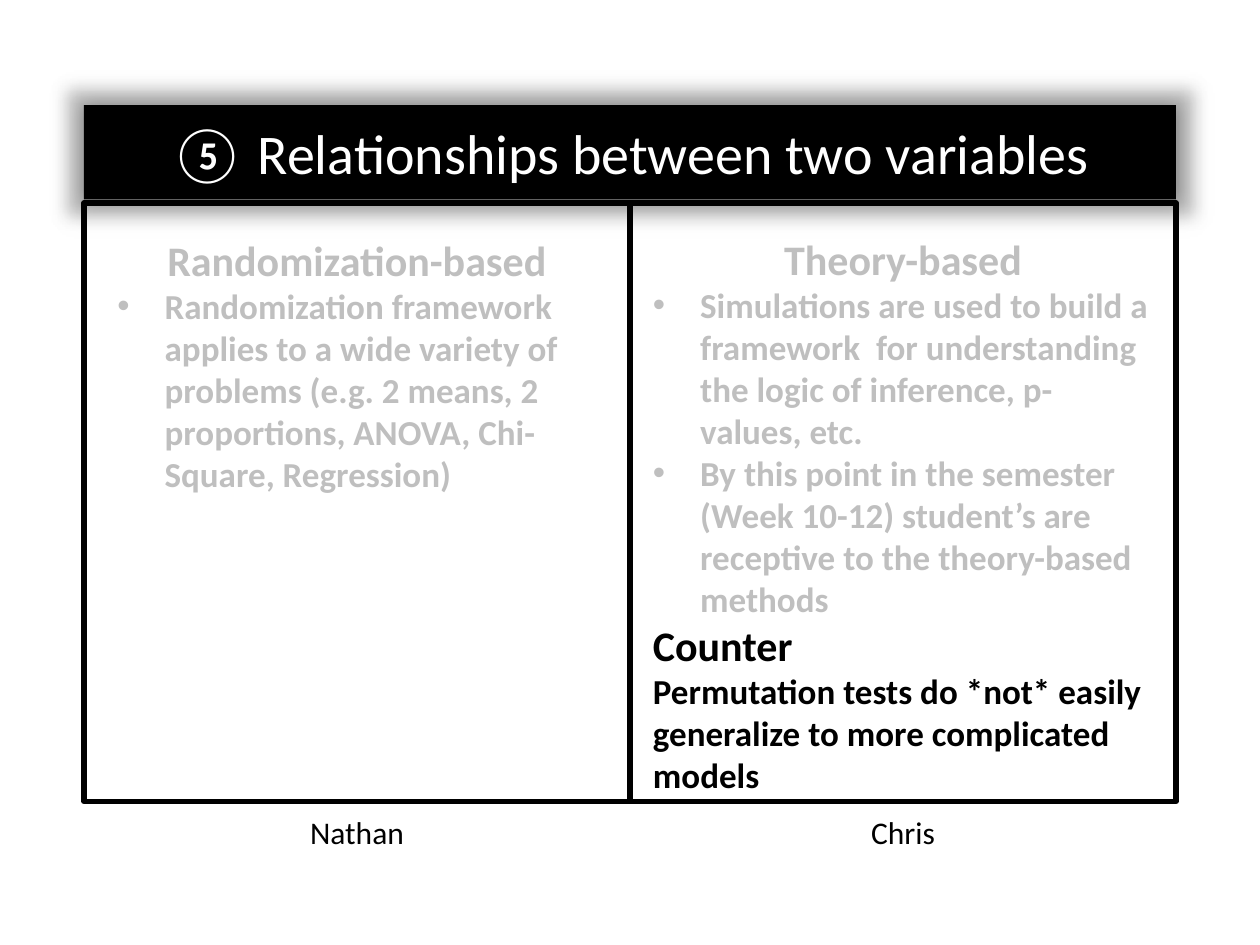
"""Build a slide that sets randomization-based against theory-based methods."""
import lxml.etree
import pptx
import pptx.dml.color
import pptx.enum.shapes
import pptx.enum.text
import pptx.oxml
import pptx.util

Pt = pptx.util.Pt
ALIGN = pptx.enum.text.PP_ALIGN
NAMESPACE = "http://schemas.openxmlformats.org/drawingml/2006/main"
GLOW = f"""<a:effectLst xmlns:a="{NAMESPACE}">
<a:glow rad="{Pt(18)}"><a:srgbClr val="000000"><a:alpha val="22000"/></a:srgbClr></a:glow>
<a:outerShdw blurRad="{Pt(10)}" dist="0" rotWithShape="0">
<a:srgbClr val="000000"><a:alpha val="35000"/></a:srgbClr></a:outerShdw></a:effectLst>"""


def color(value):
    return pptx.dml.color.RGBColor.from_string(value)


def write(frame, paragraphs):
    frame.word_wrap = True
    for index, (text, size, shade, bold, style) in enumerate(paragraphs):
        para = frame.add_paragraph() if index else frame.paragraphs[0]
        para.alignment = ALIGN.CENTER if style == "center" else ALIGN.LEFT
        span = para.add_run()
        span.text = text
        for name, value in {"name": "Calibri", "size": Pt(size), "bold": bold}.items():
            setattr(span.font, name, value)
        span.font.color.rgb = color(shade)
        if style == "bullet":
            properties = para._p.get_or_add_pPr()
            properties.set("marL", str(Pt(27)))
            properties.set("indent", str(Pt(-27)))
            bullet_font = lxml.etree.SubElement(properties, f"{{{NAMESPACE}}}buFont")
            bullet_font.set("typeface", "Arial")
            bullet = lxml.etree.SubElement(properties, f"{{{NAMESPACE}}}buChar")
            bullet.set("char", "•")


deck = pptx.Presentation()
deck.slide_width, deck.slide_height = Pt(720), Pt(540)
page = deck.slides.add_slide(deck.slide_layouts[5])

left, column_width = 48, 312
title = page.shapes.title
for name, value in {"left": left, "top": 60, "width": 2 * column_width, "height": 54}.items():
    setattr(title, name, Pt(value))
title.fill.solid()
title.fill.fore_color.rgb = color("000000")
title.line.fill.background()
title._element.spPr.append(pptx.oxml.parse_xml(GLOW))
title.text_frame.auto_size = pptx.enum.text.MSO_AUTO_SIZE.NONE
title.text_frame.vertical_anchor = pptx.enum.text.MSO_ANCHOR.MIDDLE
write(title.text_frame, [("⑤ Relationships between two variables", 32, "FFFFFF", False, "center")])

faded, black = "BFBFBF", "000000"
randomization = [
    ("Randomization-based", 24, faded, True, "center"),
    ("Randomization framework applies to a wide variety of problems "
     "(e.g. 2 means, 2 proportions, ANOVA, Chi-Square, Regression)", 20, faded, True, "bullet"),
]
theory = [
    ("Theory-based", 24, faded, True, "center"),
    ("Simulations are used to build a framework  for understanding the logic "
     "of inference, p-values, etc.", 20, faded, True, "bullet"),
    ("By this point in the semester (Week 10-12) student’s are receptive to "
     "the theory-based methods", 20, faded, True, "bullet"),
    ("Counter", 24, black, True, "left"),
    ("Permutation tests do *not* easily generalize to more complicated models",
     20, black, True, "left"),
]
columns = [
    ("Nathan", randomization, (60, 130.3, 288, 173.5)),
    ("Chris", theory, (366, 129.6, 300, 356.4)),
]

for index, (speaker, argument, area) in enumerate(columns):
    column_left = left + index * column_width
    panel = page.shapes.add_shape(
        pptx.enum.shapes.MSO_SHAPE.RECTANGLE, Pt(column_left), Pt(116), Pt(column_width), Pt(342))
    panel.shadow.inherit = False
    panel.fill.background()
    panel.line.color.rgb = color(black)
    panel.line.width = Pt(3)
    name_area = (column_left, 460.8, column_width, 29)
    name_line = [(speaker, 18, black, False, "center")]
    for place, paragraphs in ((area, argument), (name_area, name_line)):
        box = page.shapes.add_textbox(*map(Pt, place))
        box.text_frame.auto_size = pptx.enum.text.MSO_AUTO_SIZE.SHAPE_TO_FIT_TEXT
        write(box.text_frame, paragraphs)

deck.save("out.pptx")
